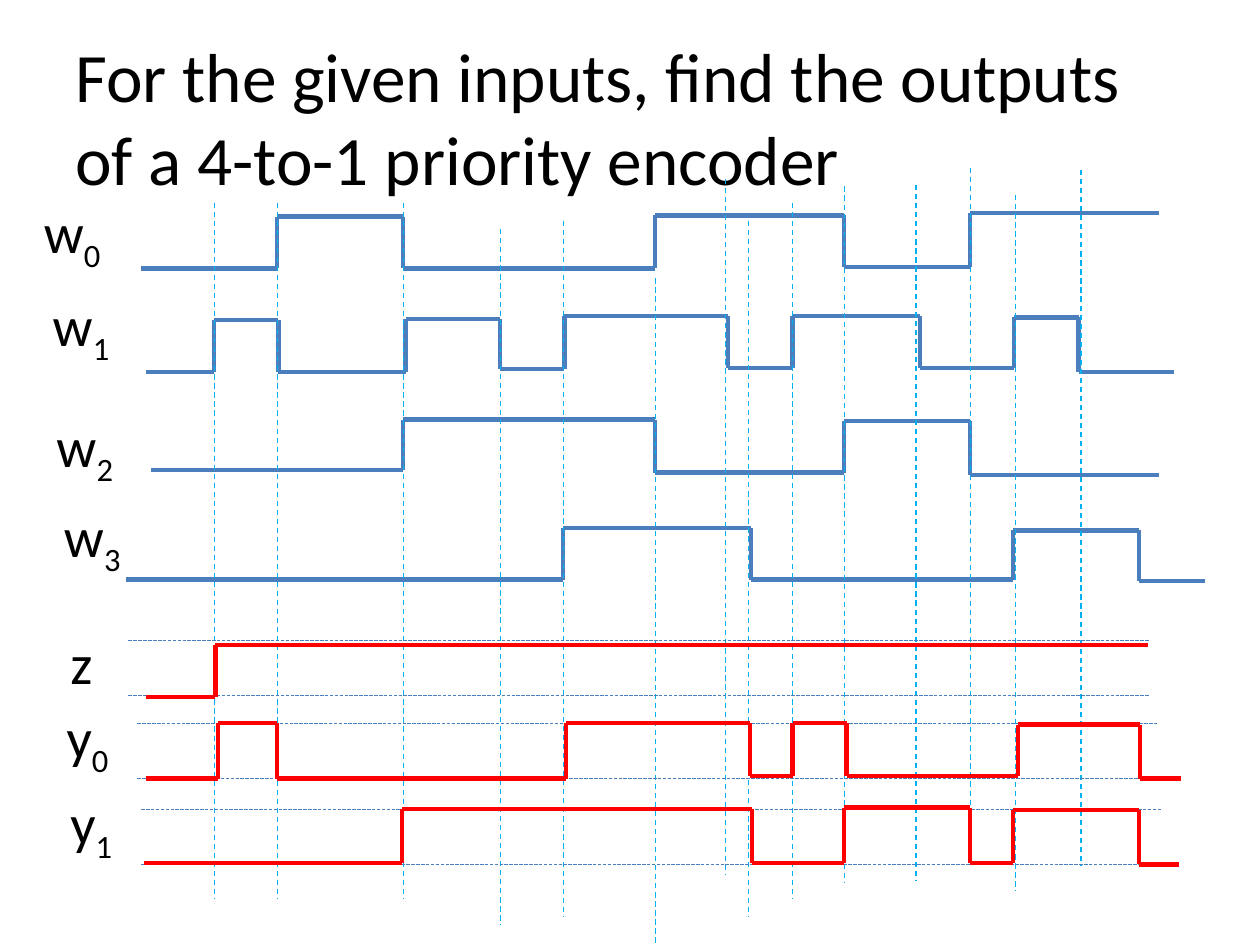
from dataclasses import dataclass
from itertools import pairwise

from lxml.etree import SubElement
from pptx import Presentation
from pptx.dml.color import RGBColor
from pptx.enum.dml import MSO_LINE
from pptx.enum.shapes import MSO_CONNECTOR
from pptx.enum.text import MSO_ANCHOR
from pptx.oxml.ns import qn
from pptx.util import Cm, Length, Pt

BLUE = RGBColor(0x4B, 0x7E, 0xBC)
CYAN = RGBColor(0x00, 0xB0, 0xF0)
RED = RGBColor(0xFF, 0x00, 0x00)
BLACK = RGBColor(0x00, 0x00, 0x00)
FONT = "Calibri"
UNIT = 2.54  # one grid unit in centimetres
GUIDE = 5.52
RAIL = 8.1


@dataclass
class Wave:
    """A signal: each step is (start x, level y), the last one runs to end."""
    color: RGBColor
    steps: list[tuple[float, float]]
    end: float


@dataclass
class Label:
    name: str
    sub: str
    left: float
    top: float
    width: float


INPUTS = [
    Wave(BLUE, [(1.12, 2.13), (2.2, 1.72), (3.2, 2.13), (5.2, 1.71),
                (6.7, 2.12), (7.7, 1.69)], 9.2),
    Wave(BLUE, [(1.16, 2.95), (1.7, 2.54), (2.21, 2.95), (3.22, 2.53),
                (3.97, 2.93), (4.48, 2.51), (5.78, 2.92), (6.29, 2.51),
                (7.3, 2.92), (8.05, 2.52), (8.56, 2.95)], 9.32),
    Wave(BLUE, [(1.2, 3.73), (3.2, 3.33), (5.2, 3.75), (6.7, 3.34),
                (7.7, 3.77)], 9.2),
    Wave(BLUE, [(1, 4.6), (4.47, 4.19), (5.96, 4.6), (8.04, 4.21),
                (9.04, 4.61)], 9.56),
]
OUTPUTS = [
    Wave(RED, [(1.16, 5.53), (1.71, 5.12)], 9.11),
    Wave(RED, [(1.16, 6.18), (1.73, 5.74), (2.2, 6.18), (4.49, 5.74),
               (5.95, 6.16), (6.29, 5.74), (6.72, 6.16), (8.08, 5.75),
               (9.05, 6.18)], 9.37),
    Wave(RED, [(1.14, 6.85), (3.19, 6.42), (5.97, 6.85), (6.7, 6.41),
               (7.7, 6.85), (8.04, 6.43), (9.04, 6.86)], 9.36),
]
GUIDES = [(1.7, 1.61), (2.2, 1.61), (3.2, 1.61), (3.97, 1.82), (4.47, 1.75),
          (5.2, 2.21), (5.76, 1.42), (5.94, 1.75), (6.29, 1.61), (6.7, 1.48),
          (7.27, 1.47), (7.7, 1.33), (8.06, 1.55), (8.58, 1.35)]
RAILS = [(1.02, 5.08), (1.02, 5.52), (1.09, 5.74), (1.09, 6.18),
         (1.12, 6.42), (1.12, 6.86)]
LABELS = [
    Label("w", "0", 0.25, 1.52, 0.7),
    Label("w", "1", 0.32, 2.26, 0.7),
    Label("w", "2", 0.35, 3.22, 0.7),
    Label("w", "3", 0.41, 3.93, 0.7),
    Label("z", "", 0.46, 4.94, 0.63),
    Label("y", "0", 0.43, 5.53, 0.63),
    Label("y", "1", 0.46, 6.21, 0.63),
]


def grid(n: float) -> Length:
    return Cm(n * UNIT)


def line(shapes, x1: float, y1: float, x2: float, y2: float,
         color: RGBColor, width: float = 2.5, dash=None) -> None:
    rule = shapes.add_connector(MSO_CONNECTOR.STRAIGHT, grid(x1), grid(y1),
                                grid(x2), grid(y2))
    rule.line.color.rgb = color
    rule.line.width = Pt(width)
    if dash is not None:
        rule.line.dash_style = dash
    SubElement(rule._element.spPr, qn("a:effectLst"))


def draw_wave(shapes, wave: Wave) -> None:
    """Draw the levels, then the edges that join them."""
    group = shapes.add_group_shape().shapes
    ends = [x for x, _ in wave.steps[1:]] + [wave.end]
    for (x, y), end in zip(wave.steps, ends):
        line(group, x, y, end, y, wave.color)
    for (_, y1), (x, y2) in pairwise(wave.steps):
        line(group, x, y1, x, y2, wave.color)


def add_box(shapes, left: float, top: float, width: float, height: float):
    frame = shapes.add_textbox(grid(left), grid(top), grid(width),
                               grid(height)).text_frame
    frame.word_wrap = True
    return frame


def add_run(frame, text: str, size: float, sub: bool = False) -> None:
    run = frame.paragraphs[0].add_run()
    run.text = text
    run.font.name = FONT
    run.font.size = Pt(size)
    run.font.color.rgb = BLACK
    if sub:
        run._r.get_or_add_rPr().set("baseline", "-25000")


def draw_label(shapes, label: Label) -> None:
    frame = add_box(shapes, label.left, label.top, label.width, 0.8)
    add_run(frame, label.name, 32)
    if label.sub:
        add_run(frame, label.sub, 32, sub=True)


def main() -> None:
    deck = Presentation()
    deck.slide_width, deck.slide_height = grid(10), grid(7.5)
    shapes = deck.slides.add_slide(deck.slide_layouts[6]).shapes

    title = add_box(shapes, 0.5, 0.3, 9, 1.25)
    title.vertical_anchor = MSO_ANCHOR.MIDDLE
    add_run(title, "For the given inputs, find the outputs of a 4-to-1 "
                   "priority encoder", 39.6)

    for wave in INPUTS:
        draw_wave(shapes, wave)
    for x, top in GUIDES:
        line(shapes, x, top, x, top + GUIDE, CYAN, 0.75, MSO_LINE.DASH)
    for label in LABELS:
        draw_label(shapes, label)
    for left, y in RAILS:
        line(shapes, left, y, left + RAIL, y, BLUE, 0.25, MSO_LINE.LONG_DASH)
    for wave in OUTPUTS:
        draw_wave(shapes, wave)

    deck.save("out.pptx")


if __name__ == "__main__":
    main()
